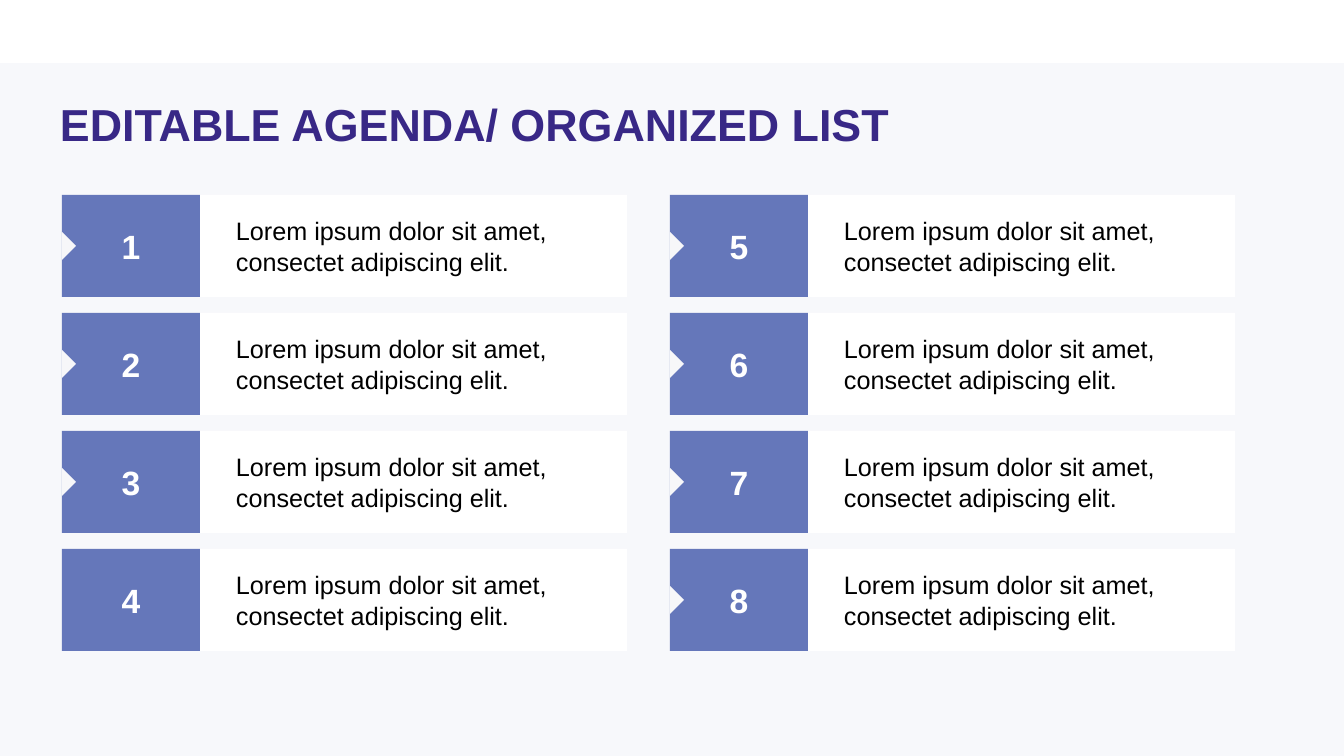
"""Build an agenda slide with eight numbered items in two columns."""
from dataclasses import dataclass

from lxml import etree
from pptx import Presentation
from pptx.dml.color import RGBColor
from pptx.enum.shapes import MSO_SHAPE
from pptx.enum.text import MSO_ANCHOR, PP_ALIGN
from pptx.oxml.ns import qn
from pptx.util import Pt

RECTANGLE = MSO_SHAPE.RECTANGLE
TRIANGLE = MSO_SHAPE.ISOSCELES_TRIANGLE
MIDDLE = MSO_ANCHOR.MIDDLE
TOP = MSO_ANCHOR.TOP
LEFT = PP_ALIGN.LEFT
CENTER = PP_ALIGN.CENTER

HEADING = "EDITABLE AGENDA/ ORGANIZED LIST"
AGENDA = ["Lorem ipsum dolor sit amet, consectet adipiscing elit."] * 8
UNNOTCHED = {4}

PX = 914400 / 100.8
SLIDE_W, SLIDE_H = 1344, 756
PANEL_TOP = 63
HEADING_BOX = (60, 103, 1225, 84)
ROWS = 4
GRID_X, GRID_Y = 62, 195
COLUMN_PITCH, ROW_PITCH = 608, 118
NUMBER_W, ITEM_W, ITEM_H = 138, 427, 102
ITEM_INDENT = 36
NOTCH_BASE, NOTCH_DEPTH = 28, 14


@dataclass(frozen=True)
class Theme:
    """Hold the colours, font and type sizes."""
    font: str = "Arial"
    panel: str = "E6E8F5"
    panel_opacity: int = 30
    heading: str = "382886"
    number_fill: str = "6577BA"
    number_text: str = "FFFFFF"
    item_fill: str = "FFFFFF"
    item_text: str = "000000"
    notch: str = "F7F7F9"
    heading_size: int = 32
    number_size: int = 24
    item_size: int = 18


THEME = Theme()


def emu(*lengths):
    """Turn px lengths into EMU."""
    return [round(length * PX) for length in lengths]


def add_block(shapes, kind, box, color):
    """Add a flat filled shape without outline."""
    block = shapes.add_shape(kind, *emu(*box))
    block.shadow.inherit = False
    block.fill.solid()
    block.fill.fore_color.rgb = RGBColor.from_string(color)
    block.line.fill.background()
    return block


def write(holder, text, size, color, bold=False, align=LEFT, anchor=MIDDLE):
    """Write one run of text and return its frame."""
    frame = holder.text_frame
    frame.word_wrap = True
    frame.vertical_anchor = anchor
    paragraph = frame.paragraphs[0]
    paragraph.alignment = align
    run = paragraph.add_run()
    run.text = text
    run.font.name = THEME.font
    run.font.size = Pt(size)
    run.font.bold = bold
    run.font.color.rgb = RGBColor.from_string(color)
    return frame


def add_panel(slide):
    """Add the translucent background panel."""
    panel = add_block(slide.shapes, RECTANGLE,
                      (0, PANEL_TOP, SLIDE_W, SLIDE_H - PANEL_TOP), THEME.panel)
    tint = panel.fill._xPr.find(".//" + qn("a:srgbClr"))
    etree.SubElement(tint, qn("a:alpha"), val=str(THEME.panel_opacity * 1000))


def add_heading(slide):
    """Add the slide heading."""
    heading = slide.shapes.add_textbox(*emu(*HEADING_BOX))
    frame = write(heading, HEADING, THEME.heading_size, THEME.heading, bold=True, anchor=TOP)
    frame.margin_left = frame.margin_top = frame.margin_right = 0
    frame.paragraphs[0].line_spacing = 0.9


def add_item(slide, number, text):
    """Add one agenda item with its number and notch."""
    column, row = divmod(number - 1, ROWS)
    x = GRID_X + column * COLUMN_PITCH
    y = GRID_Y + row * ROW_PITCH

    item = add_block(slide.shapes, RECTANGLE, (x + NUMBER_W, y, ITEM_W, ITEM_H), THEME.item_fill)
    frame = write(item, text, THEME.item_size, THEME.item_text)
    frame.margin_left, = emu(ITEM_INDENT)

    marker = slide.shapes.add_group_shape()
    badge = add_block(marker.shapes, RECTANGLE, (x, y, NUMBER_W, ITEM_H), THEME.number_fill)
    write(badge, str(number), THEME.number_size, THEME.number_text, bold=True, align=CENTER)
    if number not in UNNOTCHED:
        notch_box = (x + (NOTCH_DEPTH - NOTCH_BASE) / 2, y + (ITEM_H - NOTCH_DEPTH) / 2,
                     NOTCH_BASE, NOTCH_DEPTH)
        notch = add_block(marker.shapes, TRIANGLE, notch_box, THEME.notch)
        notch.rotation = 90


def main():
    """Build and save the slide."""
    deck = Presentation()
    deck.slide_width, deck.slide_height = emu(SLIDE_W, SLIDE_H)
    slide = deck.slides.add_slide(deck.slide_layouts[6])
    add_panel(slide)
    add_heading(slide)
    for number, text in enumerate(AGENDA, start=1):
        add_item(slide, number, text)
    deck.save("out.pptx")


if __name__ == "__main__":
    main()
